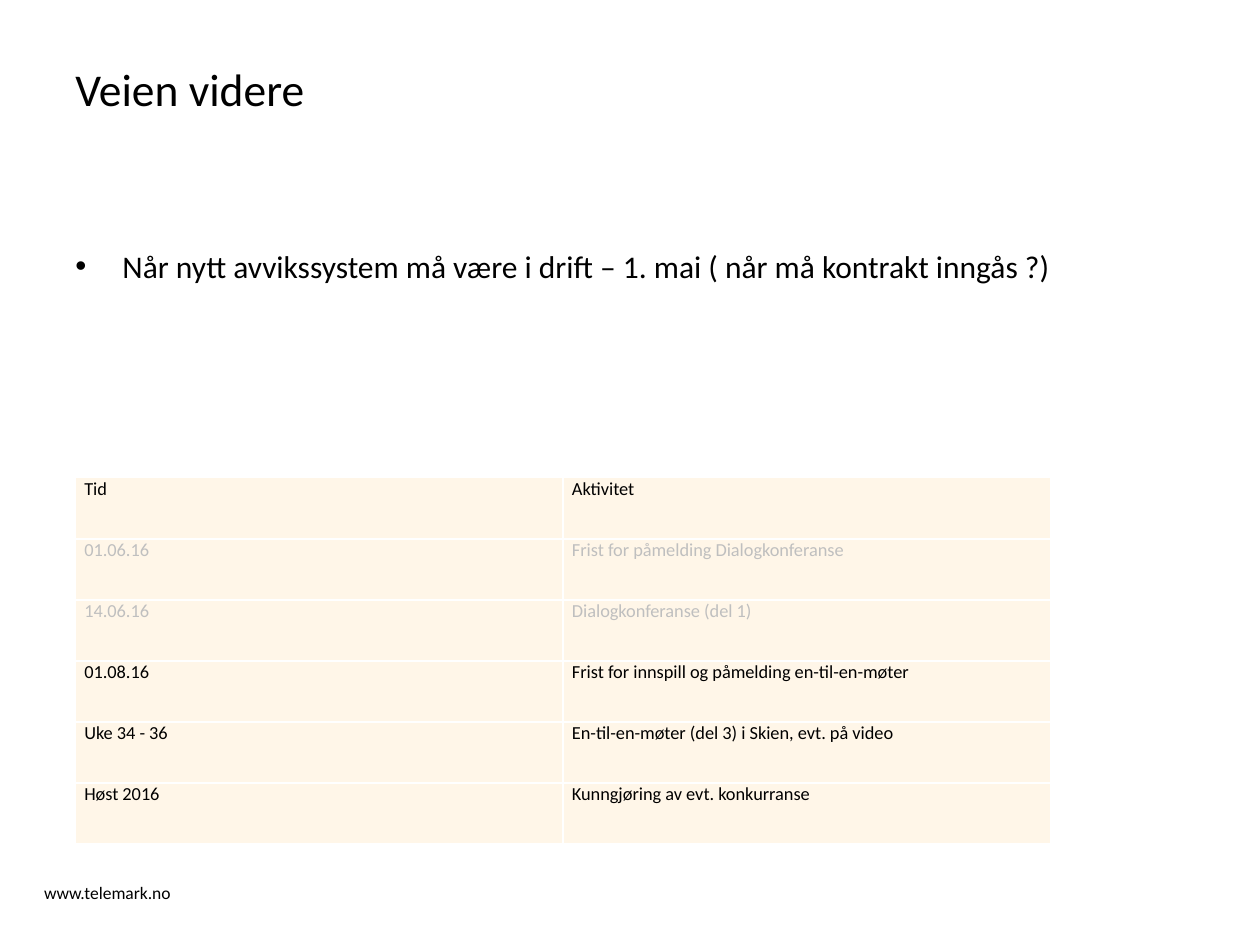
from lxml import etree
from pptx import Presentation
from pptx import util as u
from pptx.dml.color import RGBColor
from pptx.enum import text
from pptx.oxml import ns

FONT = "Calibri"
COLORS = {"text": "000000", "past": "BFBFBF", "cell": "FFF6E8", "border": "FFFFFF"}
TITLE_BOX = (1.52, 1.22, 16.76, 2.92)
BODY_BOX = (1.52, 4.98, 22.43, 12.04)
PLAN_BOX = (1.52, 9.63, 19.66, 7.39)
FOOTER_BOX = (0.64, 17.65, 3.58, 0.69)

# time, activity, colour
PLAN = [
    ("Tid", "Aktivitet", "text"),
    ("01.06.16", "Frist for påmelding Dialogkonferanse", "past"),
    ("14.06.16", "Dialogkonferanse (del 1)", "past"),
    ("01.08.16", "Frist for innspill og påmelding en-til-en-møter", "text"),
    ("Uke 34 - 36", "En-til-en-møter (del 3) i Skien, evt. på video", "text"),
    ("Høst 2016", "Kunngjøring av evt. konkurranse", "text"),
]


def lengths(box):
    return [u.Cm(v) for v in box]


def add_run(p, wording, size, color="text"):
    r = p.add_run()
    r.text = wording
    r.font.name = FONT
    r.font.size = u.Pt(size)
    r.font.color.rgb = RGBColor.from_string(COLORS[color])


def clear_margins(tf):
    tf.margin_left = tf.margin_right = tf.margin_top = tf.margin_bottom = 0
    tf.word_wrap = True
    tf.vertical_anchor = text.MSO_ANCHOR.TOP


def add_title(s, box, wording):
    sp = s.shapes.title
    sp.left, sp.top, sp.width, sp.height = lengths(box)
    tf = sp.text_frame
    clear_margins(tf)
    tf.auto_size = text.MSO_AUTO_SIZE.NONE
    p = tf.paragraphs[0]
    p.alignment = text.PP_ALIGN.LEFT
    add_run(p, wording, 26)


def add_body(s, box, wording):
    tf = s.shapes.add_textbox(*lengths(box)).text_frame
    clear_margins(tf)
    p = tf.paragraphs[0]
    # hanging bullet
    pPr = p._p.get_or_add_pPr()
    indent = u.Cm(0.95)
    pPr.set("marL", str(indent))
    pPr.set("indent", str(-indent))
    etree.SubElement(pPr, ns.qn("a:buFont"), typeface="Arial")
    etree.SubElement(pPr, ns.qn("a:buChar"), char="•")
    add_run(p, wording, 18)


def add_borders(cell):
    tcPr = cell._tc.get_or_add_tcPr()
    for i, side in enumerate(("lnL", "lnR", "lnT", "lnB")):
        ln = etree.Element(ns.qn(f"a:{side}"), w=str(u.Pt(1)))
        fill = etree.SubElement(ln, ns.qn("a:solidFill"))
        etree.SubElement(fill, ns.qn("a:srgbClr"), val=COLORS["border"])
        tcPr.insert(i, ln)


def add_plan(s, box, plan):
    left, top, width, height = lengths(box)
    table = s.shapes.add_table(len(plan), 2, left, top, width, height).table
    for row, (*wordings, color) in zip(table.rows, plan):
        for cell, wording in zip(row.cells, wordings):
            cell.margin_left = cell.margin_right = u.Cm(0.18)
            cell.margin_top = cell.margin_bottom = 0
            cell.fill.solid()
            cell.fill.fore_color.rgb = RGBColor.from_string(COLORS["cell"])
            add_borders(cell)
            p = cell.text_frame.paragraphs[0]
            p.line_spacing = u.Pt(13)
            add_run(p, wording, 10.5, color)
            p.runs[0].font.bold = False


def add_footer(s, box, wording):
    tf = s.shapes.add_textbox(*lengths(box)).text_frame
    tf.word_wrap = True
    add_run(tf.paragraphs[0], wording, 10)


def main():
    prs = Presentation()
    prs.slide_width, prs.slide_height = u.Cm(25.4), u.Cm(19.05)
    s = prs.slides.add_slide(prs.slide_layouts[5])
    add_footer(s, FOOTER_BOX, "www.telemark.no")
    add_title(s, TITLE_BOX, "Veien videre")
    add_body(s, BODY_BOX,
             "Når nytt avvikssystem må være i drift – 1. mai ( når må kontrakt inngås ?)")
    add_plan(s, PLAN_BOX, PLAN)
    prs.save("out.pptx")


if __name__ == "__main__":
    main()
